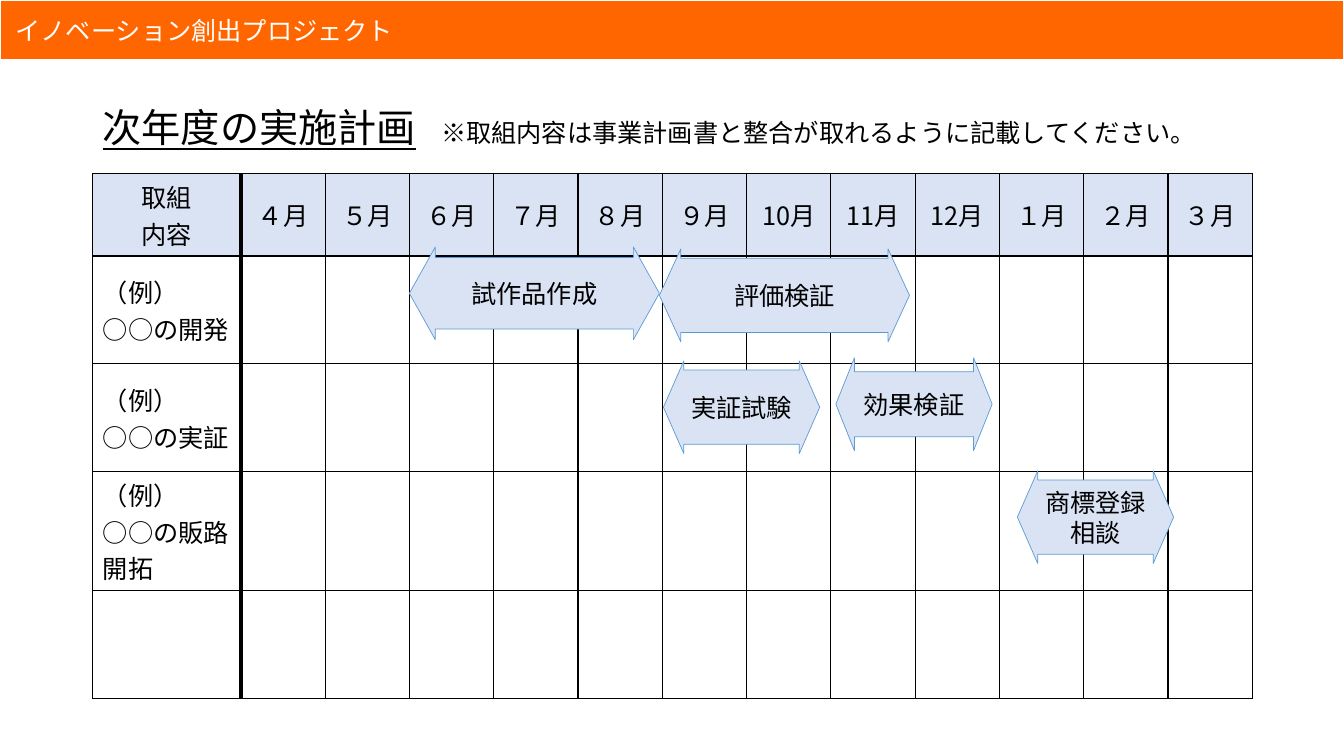
from dataclasses import dataclass

from lxml import etree
from pptx import Presentation
from pptx.dml.color import RGBColor
from pptx.enum.shapes import MSO_SHAPE
from pptx.enum.text import MSO_ANCHOR, PP_ALIGN
from pptx.oxml.ns import qn
from pptx.util import Inches, Pt

LEFT, CENTER = PP_ALIGN.LEFT, PP_ALIGN.CENTER
MIDDLE = MSO_ANCHOR.MIDDLE
RECT, ARROW = MSO_SHAPE.RECTANGLE, MSO_SHAPE.LEFT_RIGHT_ARROW


@dataclass(frozen=True)
class Theme:
    font: str = "Noto Sans CJK JP"
    black: str = "000000"
    white: str = "FFFFFF"
    orange: str = "FF6600"
    pale: str = "DAE3F3"
    blue: str = "5B9BD5"
    head: int = 28
    body: int = 18


theme = Theme()
layout = {"word_wrap": True, "vertical_anchor": MIDDLE}


def write(para, text, align=LEFT, size=theme.body, color=theme.black, line=False):
    para.alignment = align
    run = para.add_run()
    run.text = text
    style = {"name": theme.font, "size": Pt(size), "bold": False, "underline": line}
    for key, value in style.items():
        setattr(run.font, key, value)
    run.font.color.rgb = RGBColor.from_string(color)
    east = etree.SubElement(run.font._element, qn("a:ea"))
    east.set("typeface", theme.font)


def draw(kind, box, fill, edge, width):
    shape = slide.shapes.add_shape(kind, *map(Inches, box))
    shape.shadow.inherit = False
    shape.fill.solid()
    shape.fill.fore_color.rgb = RGBColor.from_string(fill)
    shape.line.color.rgb = RGBColor.from_string(edge)
    shape.line.width = Pt(width)
    for key, value in layout.items():
        setattr(shape.text_frame, key, value)
    return shape


deck = Presentation()
deck.slide_width, deck.slide_height = Inches(13.33), Inches(7.5)
slide = deck.slides.add_slide(deck.slide_layouts[6])

banner = draw(RECT, (0, 0, 13.33, 0.6), theme.orange, theme.white, 1.5)
write(banner.text_frame.paragraphs[0], " イノベーション創出プロジェクト", color=theme.white)

title = slide.shapes.add_textbox(*map(Inches, (0.92, 0.74, 11.5, 1.1)))
for key, value in layout.items():
    setattr(title.text_frame, key, value)
para = title.text_frame.paragraphs[0]
para.line_spacing = 0.9
write(para, "次年度の実施計画", size=theme.head, line=True)
write(para, "　※取組内容は事業計画書と整合が取れるように記載してください。")

months = ["４月", "５月", "６月", "７月", "８月", "９月",
          "10月", "11月", "12月", "１月", "２月", "３月"]
tasks = ["（例）\n○○の開発", "（例）\n○○の実証", "（例）\n○○の販路開拓", ""]
rows = [["取組\n内容"] + months] + [[task] + [""] * len(months) for task in tasks]
tall = [0.82, 1.07, 1.07, 1.18, 1.07]
wide, first = 11.5, 1.47

frame = slide.shapes.add_table(
    len(rows), len(rows[0]), *map(Inches, (0.92, 1.72, wide, sum(tall))))
plan = frame.table
for key, value in {"first_row": False, "horz_banding": False}.items():
    setattr(plan, key, value)
for col, column in enumerate(plan.columns):
    column.width = Inches((wide - first) / len(months) if col else first)
for band, height in zip(plan.rows, tall):
    band.height = Inches(height)

for row, texts in enumerate(rows):
    for col, text in enumerate(texts):
        cell = plan.cell(row, col)
        cell.vertical_anchor = MIDDLE
        if row:
            cell.fill.background()
        else:
            cell.fill.solid()
            cell.fill.fore_color.rgb = RGBColor.from_string(theme.pale)
        if text:
            for index, part in enumerate(text.split("\n")):
                body = cell.text_frame
                para = body.add_paragraph() if index else body.paragraphs[0]
                write(para, part, LEFT if row else CENTER)
        props = cell._tc.get_or_add_tcPr()
        for spot, side in enumerate("LRTB"):
            thick = (col, side) in ((0, "R"), (1, "L"))
            edge = etree.Element(qn("a:ln" + side), w=str(Pt(3 if thick else 1)))
            paint = etree.SubElement(edge, qn("a:solidFill"))
            etree.SubElement(paint, qn("a:srgbClr"), val=theme.black)
            props.insert(spot, edge)

steps = [
    ("試作品作成", 4.06, 2.45, 2.48, 0.77, 0.28),
    ("評価検証", 6.54, 2.47, 2.48, 0.8, 0.23),
    ("実証試験", 6.58, 3.58, 1.55, 0.8, 0.22),
    ("効果検証", 8.29, 3.55, 1.55, 0.7, 0.2),
    ("商標登録相談", 10.09, 4.67, 1.55, 0.8, 0.22),
]
for text, left, top, width, shaft, point in steps:
    arrow = draw(ARROW, (left, top, width, 0.92), theme.pale, theme.blue, 0.5)
    arrow.adjustments[0], arrow.adjustments[1] = shaft, point
    write(arrow.text_frame.paragraphs[0], text, CENTER)

deck.save("out.pptx")
